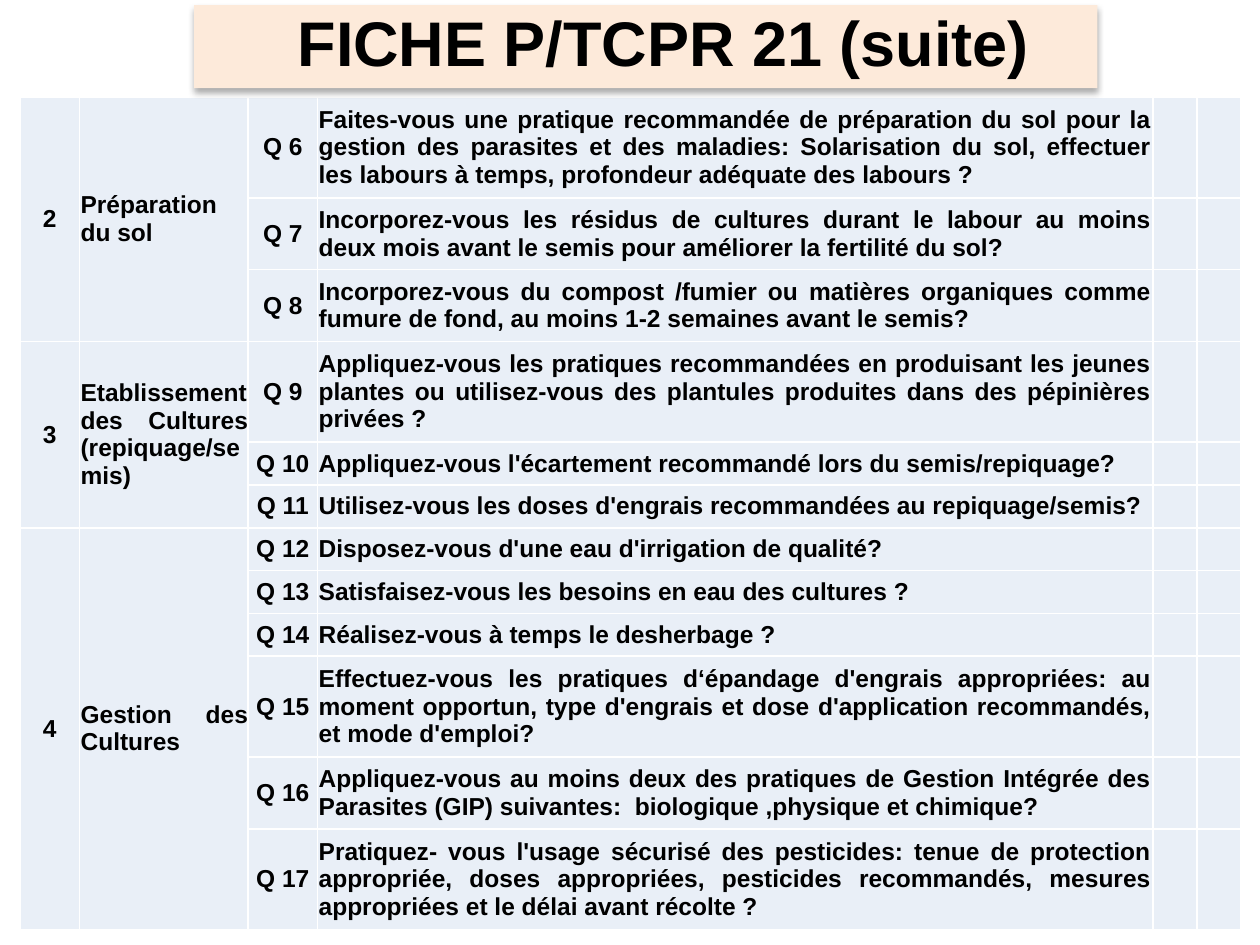
from typing import NamedTuple

from lxml.etree import SubElement
from pptx import Presentation
from pptx.dml.color import RGBColor
from pptx.enum.shapes import MSO_SHAPE
from pptx.enum.text import MSO_ANCHOR, PP_ALIGN
from pptx.oxml import parse_xml
from pptx.oxml.ns import nsdecls, qn
from pptx.util import Emu, Inches, Pt

BLACK = RGBColor(0x00, 0x00, 0x00)
WHITE = RGBColor(0xFF, 0xFF, 0xFF)
PEACH = RGBColor(0xFD, 0xEA, 0xDA)
PALE_BLUE = RGBColor(0xE9, 0xEF, 0xF7)
FONT = "Arial"
COLUMN_WIDTHS = (0.47, 1.34, 0.55, 6.63, 0.35, 0.35)
FIRST_QUESTION = 6


class Question(NamedTuple):
    text: str
    lines: int


class Section(NamedTuple):
    number: int
    title: str
    questions: tuple[Question, ...]


SECTIONS = (
    Section(2, "Préparation du sol", (
        Question("Faites-vous une pratique recommandée de préparation du sol pour la gestion des parasites et des maladies: Solarisation du sol, effectuer les labours à temps, profondeur adéquate des labours ?", 3),
        Question("Incorporez-vous les résidus de cultures durant le labour au moins deux mois avant le semis pour améliorer la fertilité du sol?", 2),
        Question("Incorporez-vous du compost /fumier ou matières organiques comme fumure de fond, au moins 1-2 semaines avant le semis?", 2),
    )),
    Section(3, "Etablissement des Cultures (repiquage/semis)", (
        Question("Appliquez-vous les pratiques recommandées en produisant les jeunes plantes ou utilisez-vous des plantules produites dans des pépinières privées ?", 3),
        Question("Appliquez-vous l'écartement recommandé lors du semis/repiquage?", 1),
        Question("Utilisez-vous les doses d'engrais recommandées au repiquage/semis?", 1),
    )),
    Section(4, "Gestion des Cultures", (
        Question("Disposez-vous d'une eau d'irrigation de qualité?", 1),
        Question("Satisfaisez-vous les besoins en eau des cultures ?", 1),
        Question("Réalisez-vous à temps le desherbage ?", 1),
        Question("Effectuez-vous les pratiques d‘épandage d'engrais appropriées: au moment opportun, type d'engrais et dose d'application recommandés, et mode d'emploi?", 3),
        Question("Appliquez-vous au moins deux des pratiques de Gestion Intégrée des Parasites (GIP) suivantes:  biologique ,physique et chimique?", 2),
        Question("Pratiquez- vous l'usage sécurisé des pesticides: tenue de protection appropriée, doses appropriées, pesticides recommandés, mesures appropriées et le délai avant récolte ?", 3),
    )),
)


def row_height(lines: int) -> Emu:
    return Inches(0.11 + 0.23 * lines)


def format_text(p, size: int, align: PP_ALIGN) -> None:
    p.alignment = align
    for r in p.runs:
        r.font.name = FONT
        r.font.size = Pt(size)
        r.font.bold = True
        r.font.color.rgb = BLACK


def style_cell(cell) -> None:
    cell.margin_left = cell.margin_right = Inches(0.01)
    cell.margin_top = cell.margin_bottom = 0
    cell.vertical_anchor = MSO_ANCHOR.MIDDLE
    tc_pr = cell._tc.get_or_add_tcPr()
    for side in ("a:lnL", "a:lnR", "a:lnT", "a:lnB"):
        line = SubElement(tc_pr, qn(side), w=str(Pt(0.96)))
        fill = SubElement(line, qn("a:solidFill"))
        SubElement(fill, qn("a:srgbClr"), val=str(WHITE))
    cell.fill.solid()
    cell.fill.fore_color.rgb = PALE_BLUE


def write_cell(cell, text: str, align: PP_ALIGN) -> None:
    cell.text_frame.text = text
    cell.margin_top = cell.margin_bottom = Inches(0.05)
    format_text(cell.text_frame.paragraphs[0], 14, align)


def add_questionnaire(s) -> None:
    questions = [q for section in SECTIONS for q in section.questions]
    height = sum(row_height(q.lines) for q in questions)
    frame = s.shapes.add_table(len(questions), len(COLUMN_WIDTHS), Inches(0.16), Inches(0.77),
                               Inches(sum(COLUMN_WIDTHS)), height)
    table = frame.table
    table.first_row = table.horz_banding = False
    for column, width in zip(table.columns, COLUMN_WIDTHS):
        column.width = Inches(width)
    for cell in table.iter_cells():
        style_cell(cell)
    for i, question in enumerate(questions):
        table.rows[i].height = row_height(question.lines)
        write_cell(table.cell(i, 2), f"Q {FIRST_QUESTION + i}", PP_ALIGN.CENTER)
        write_cell(table.cell(i, 3), question.text, PP_ALIGN.JUSTIFY)
    top = 0
    for section in SECTIONS:
        bottom = top + len(section.questions) - 1
        for col in (0, 1):
            table.cell(top, col).merge(table.cell(bottom, col))
        write_cell(table.cell(top, 0), str(section.number), PP_ALIGN.CENTER)
        title_cell = table.cell(top, 1)
        write_cell(title_cell, section.title, PP_ALIGN.JUSTIFY)
        title_cell.margin_right = 0
        top = bottom + 1


def add_title(s, text: str) -> None:
    sp = s.shapes.add_shape(MSO_SHAPE.RECTANGLE, Inches(1.54), Inches(0.04), Inches(7.17), Inches(0.66))
    sp.fill.solid()
    sp.fill.fore_color.rgb = PEACH
    sp.line.fill.background()
    sp._element.spPr.append(parse_xml(
        f'<a:effectLst {nsdecls("a")}>'
        f'<a:outerShdw blurRad="{Pt(3.5)}" dist="{Pt(2.2)}" dir="5400000" rotWithShape="0">'
        f'<a:srgbClr val="{BLACK}"><a:alpha val="32000"/></a:srgbClr>'
        '</a:outerShdw></a:effectLst>'))
    tf = sp.text_frame
    tf.word_wrap = True
    tf.vertical_anchor = MSO_ANCHOR.MIDDLE
    tf.margin_left, tf.margin_right = Inches(0.48), Inches(0.2)
    tf.margin_top = tf.margin_bottom = 0
    tf.text = text
    p = tf.paragraphs[0]
    p.line_spacing = 0.9
    p.space_after = Pt(11.2)
    format_text(p, 36, PP_ALIGN.CENTER)


def main() -> None:
    prs = Presentation()
    prs.slide_width, prs.slide_height = Inches(10), Inches(7.5)
    s = prs.slides.add_slide(prs.slide_layouts[6])
    add_questionnaire(s)
    add_title(s, "FICHE P/TCPR 21 (suite)")
    prs.save("out.pptx")


if __name__ == "__main__":
    main()
